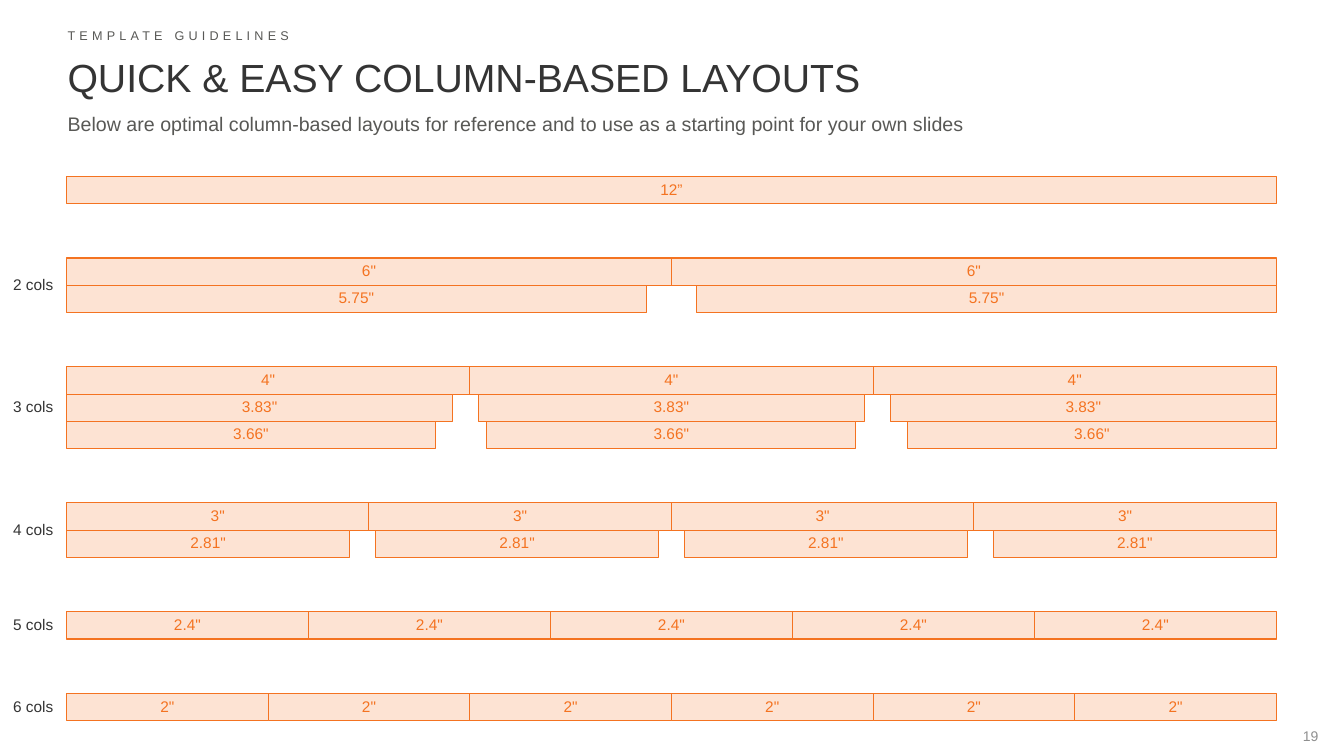
from dataclasses import dataclass

from pptx import Presentation
from pptx.dml.color import RGBColor
from pptx.enum.shapes import MSO_SHAPE as Preset
from pptx.enum.text import MSO_ANCHOR as Anchor, MSO_AUTO_SIZE as AutoSize, PP_ALIGN as Align
from pptx.util import Inches, Pt


@dataclass(frozen=True)
class Theme:
    font: str = "Arial"
    dark: str = "343434"
    grey: str = "585855"
    pale_grey: str = "8F8F8F"
    orange: str = "F47321"
    peach: str = "FDE3D3"
    title_size: int = 28
    subtitle_size: int = 14
    bar_size: int = 11
    number_size: int = 10
    kicker_size: int = 9
    line_width: float = 0.75


THEME = Theme()
LEFT = 0.66
TEXT_LEFT = 0.67
FULL_WIDTH = 12
BAR_HEIGHT = 0.27
GROUP_GAP = 0.54
FIRST_TOP = 1.75
INSETS = (0.1, 0.05, 0.1, 0.05)

GROUPS = [
    ("", 1, ["12”"]),
    ("2 cols", 2, ['6"', '5.75"']),
    ("3 cols", 3, ['4"', '3.83"', '3.66"']),
    ("4 cols", 4, ['3"', '2.81"']),
    ("5 cols", 5, ['2.4"']),
    ("6 cols", 6, ['2"']),
]


def apply_format(target, values):
    for name, value in values.items():
        setattr(target, name, value)


def write_text(shape, text, size, color, align=Align.LEFT, anchor=Anchor.TOP,
               insets=INSETS, line_spacing=1.0):
    left, top, right, bottom = map(Inches, insets)
    frame = shape.text_frame
    apply_format(frame, {
        "text": text,
        "word_wrap": True,
        "auto_size": AutoSize.NONE,
        "vertical_anchor": anchor,
        "margin_left": left,
        "margin_top": top,
        "margin_right": right,
        "margin_bottom": bottom,
    })
    paragraph = frame.paragraphs[0]
    apply_format(paragraph, {"alignment": align, "line_spacing": line_spacing})
    run = paragraph.runs[0]
    apply_format(run.font, {"name": THEME.font, "size": Pt(size)})
    run.font.color.rgb = RGBColor.from_string(color)
    return run


def add_title(slide, text):
    title = slide.shapes.title
    apply_format(title, {
        "left": Inches(TEXT_LEFT),
        "top": Inches(0.5),
        "width": Inches(FULL_WIDTH),
        "height": Inches(0.5),
    })
    write_text(title, text, THEME.title_size, THEME.dark,
               insets=(0, 0.05, 0, 0.05), line_spacing=Pt(32))


def add_text(slide, box, text, size, color, **layout):
    shape = slide.shapes.add_textbox(*map(Inches, box))
    return write_text(shape, text, size, color, **layout)


def add_bar(slide, left, top, width, text):
    bar = slide.shapes.add_shape(
        Preset.RECTANGLE, *map(Inches, (left, top, width, BAR_HEIGHT)))
    bar.shadow.inherit = False
    bar.fill.solid()
    bar.fill.fore_color.rgb = RGBColor.from_string(THEME.peach)
    bar.line.color.rgb = RGBColor.from_string(THEME.orange)
    bar.line.width = Pt(THEME.line_width)
    write_text(bar, text, THEME.bar_size, THEME.orange, Align.CENTER,
               Anchor.MIDDLE, line_spacing=0.9)


def add_bar_row(slide, top, columns, text):
    width = float(text[:-1])
    step = (FULL_WIDTH - width) / max(columns - 1, 1)
    for column in range(columns):
        add_bar(slide, LEFT + column * step, top, width, text)


def add_groups(slide):
    top = FIRST_TOP
    for label, columns, rows in GROUPS:
        height = len(rows) * BAR_HEIGHT
        if label:
            add_text(slide, (0, top, LEFT, height), label, THEME.bar_size, THEME.dark,
                     align=Align.CENTER, anchor=Anchor.MIDDLE, line_spacing=0.9)
        for row, text in enumerate(rows):
            add_bar_row(slide, top + row * BAR_HEIGHT, columns, text)
        top += height + GROUP_GAP


def main():
    presentation = Presentation()
    apply_format(presentation, {"slide_width": Inches(13.33), "slide_height": Inches(7.5)})
    slide = presentation.slides.add_slide(presentation.slide_layouts[5])
    add_title(slide, "QUICK & EASY COLUMN-BASED LAYOUTS")
    add_text(slide, (TEXT_LEFT, 1.06, FULL_WIDTH, 0.37),
             "Below are optimal column-based layouts for reference "
             "and to use as a starting point for your own slides",
             THEME.subtitle_size, THEME.grey, insets=(0, 0.05, 0, 0.05))
    kicker = add_text(slide, (TEXT_LEFT, 0.23, FULL_WIDTH, 0.27), "TEMPLATE GUIDELINES",
                      THEME.kicker_size, THEME.grey, insets=(0, 0.05, 0.1, 0.05))
    kicker.font._element.set("spc", "300")
    add_groups(slide)
    add_text(slide, (12.67, 7.1, 0.66, 0.4), "19", THEME.number_size, THEME.pale_grey,
             align=Align.CENTER, anchor=Anchor.MIDDLE, insets=(0, 0, 0, 0))
    presentation.save("out.pptx")


if __name__ == "__main__":
    main()
